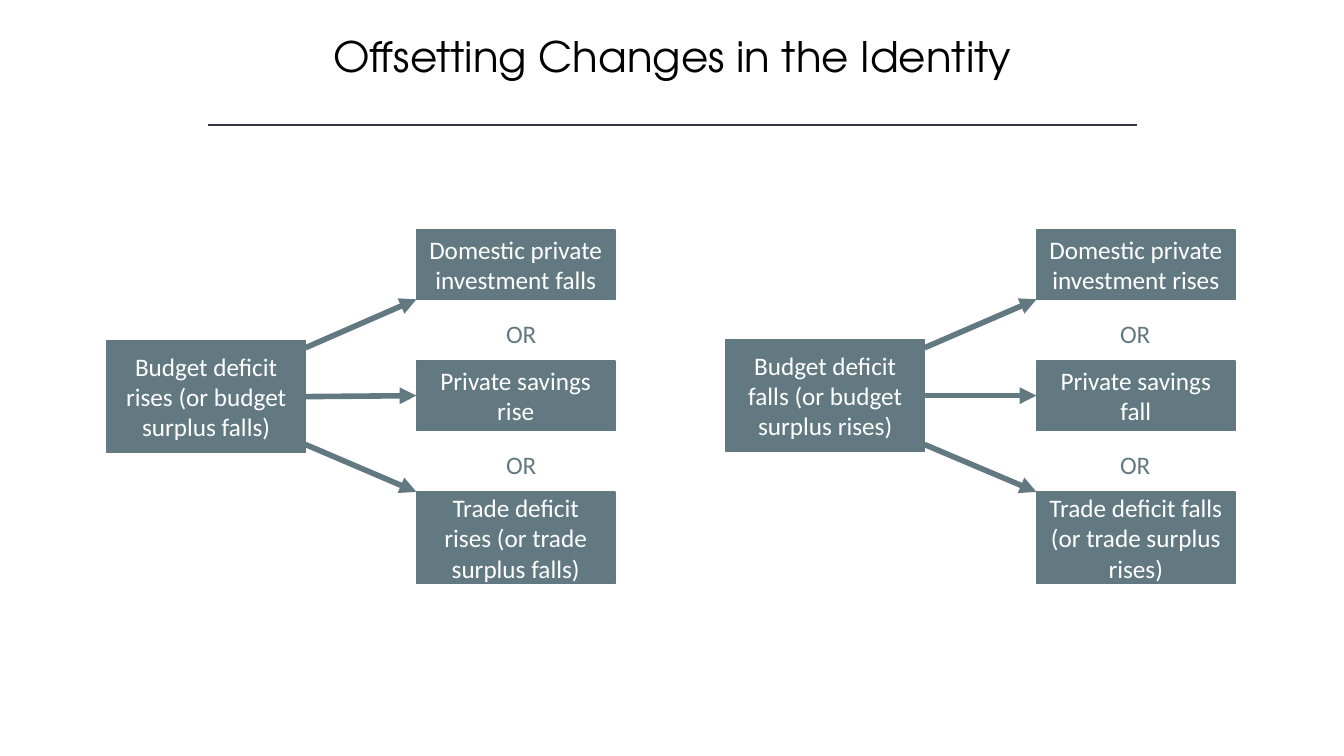
"""Build the slide on offsetting changes in the saving and investment identity."""
from dataclasses import dataclass

import lxml.etree
import pptx
import pptx.dml.color
import pptx.enum.shapes
import pptx.enum.text
import pptx.oxml.ns
import pptx.util
from pptx.util import Inches

BLACK = pptx.dml.color.RGBColor(0x00, 0x00, 0x00)
WHITE = pptx.dml.color.RGBColor(0xFF, 0xFF, 0xFF)
SLATE = pptx.dml.color.RGBColor(0x62, 0x79, 0x81)
RULE_GREY = pptx.dml.color.RGBColor(0x32, 0x35, 0x42)

BOX_WIDTH = 1.97
CAUSE_HEIGHT = 1.11
OUTCOME_TOPS = (2.28, 3.58, 4.88)
OUTCOME_HEIGHTS = (0.69, 0.69, 0.91)
OR_TOPS = (3.11, 4.41)


@dataclass(frozen=True)
class Scenario:
    cause: str
    outcomes: tuple[str, str, str]
    cause_left: float
    cause_top: float
    outcome_left: float
    or_left: float


SCENARIOS = (
    Scenario(
        "Budget deficit rises (or budget surplus falls)",
        ("Domestic private investment falls", "Private savings rise",
         "Trade deficit rises (or trade surplus falls)"),
        1.06, 3.38, 4.13, 4.62,
    ),
    Scenario(
        "Budget deficit falls (or budget surplus rises)",
        ("Domestic private investment rises", "Private savings fall",
         "Trade deficit falls (or trade surplus rises)"),
        7.2, 3.37, 10.28, 10.71,
    ),
)


def write(shape, text: str, color, size: float = 18, font: str = "Calibri") -> None:
    frame = shape.text_frame
    frame.word_wrap = True
    frame.text = text
    paragraph = frame.paragraphs[0]
    paragraph.alignment = pptx.enum.text.PP_ALIGN.CENTER
    run_font = paragraph.runs[0].font
    run_font.name = font
    run_font.size = pptx.util.Pt(size)
    run_font.color.rgb = color


def add_label(slide, text: str, left: float, top: float, width: float, height: float,
              color, size: float = 18, font: str = "Calibri"):
    label = slide.shapes.add_textbox(
        Inches(left), Inches(top), Inches(width), Inches(height))
    write(label, text, color, size, font)
    return label


def add_box(slide, text: str, left: float, top: float, height: float):
    box = slide.shapes.add_shape(
        pptx.enum.shapes.MSO_SHAPE.RECTANGLE,
        Inches(left), Inches(top), Inches(BOX_WIDTH), Inches(height))
    box.shadow.inherit = False
    box.fill.solid()
    box.fill.fore_color.rgb = SLATE
    box.line.color.rgb = SLATE
    box.line.width = pptx.util.Pt(1)
    box.text_frame.vertical_anchor = pptx.enum.text.MSO_ANCHOR.MIDDLE
    write(box, text, WHITE)
    return box


def add_line(slide, start: tuple[float, float], end: tuple[float, float],
             color, width: float):
    line = slide.shapes.add_connector(
        pptx.enum.shapes.MSO_CONNECTOR.STRAIGHT,
        Inches(start[0]), Inches(start[1]), Inches(end[0]), Inches(end[1]))
    line.line.color.rgb = color
    line.line.width = pptx.util.Pt(width)
    lxml.etree.SubElement(line._element.spPr, pptx.oxml.ns.qn("a:effectLst"))
    return line


def add_arrow(slide, start: tuple[float, float], end: tuple[float, float]):
    arrow = add_line(slide, start, end, SLATE, 4)
    stroke = arrow._element.spPr.find(pptx.oxml.ns.qn("a:ln"))
    lxml.etree.SubElement(stroke, pptx.oxml.ns.qn("a:tailEnd"), type="triangle")
    return arrow


def add_scenario(slide, scenario: Scenario) -> None:
    cause = add_box(slide, scenario.cause, scenario.cause_left,
                    scenario.cause_top, CAUSE_HEIGHT)
    outcomes = [
        add_box(slide, text, scenario.outcome_left, top, height)
        for text, top, height in zip(scenario.outcomes, OUTCOME_TOPS, OUTCOME_HEIGHTS)
    ]
    for top in OR_TOPS:
        add_label(slide, "OR", scenario.or_left, top, 1.1, 0.34, SLATE)

    cause_right = scenario.cause_left + BOX_WIDTH
    target = scenario.outcome_left
    add_arrow(slide, (cause_right, 3.45),
              (target, OUTCOME_TOPS[0] + OUTCOME_HEIGHTS[0]))
    straight = add_arrow(slide, (cause_right, 3.94), (target, 3.93))
    straight.begin_connect(cause, 3)
    straight.end_connect(outcomes[1], 1)
    add_arrow(slide, (cause_right, 4.41), (target, OUTCOME_TOPS[2]))


def main() -> None:
    presentation = pptx.Presentation()
    presentation.slide_width = Inches(13.33)
    presentation.slide_height = Inches(7.5)
    slide = presentation.slides.add_slide(presentation.slide_layouts[6])

    title = add_label(slide, "Offsetting Changes in the Identity",
                      1.72, 0.25, 9.9, 0.61, BLACK, 30, "TeX Gyre Adventor")
    title.text_frame.margin_left = title.text_frame.margin_right = Inches(0.05)
    add_line(slide, (2.06, 1.24), (11.28, 1.24), RULE_GREY, 1)
    for scenario in SCENARIOS:
        add_scenario(slide, scenario)
    presentation.save("out.pptx")


if __name__ == "__main__":
    main()
